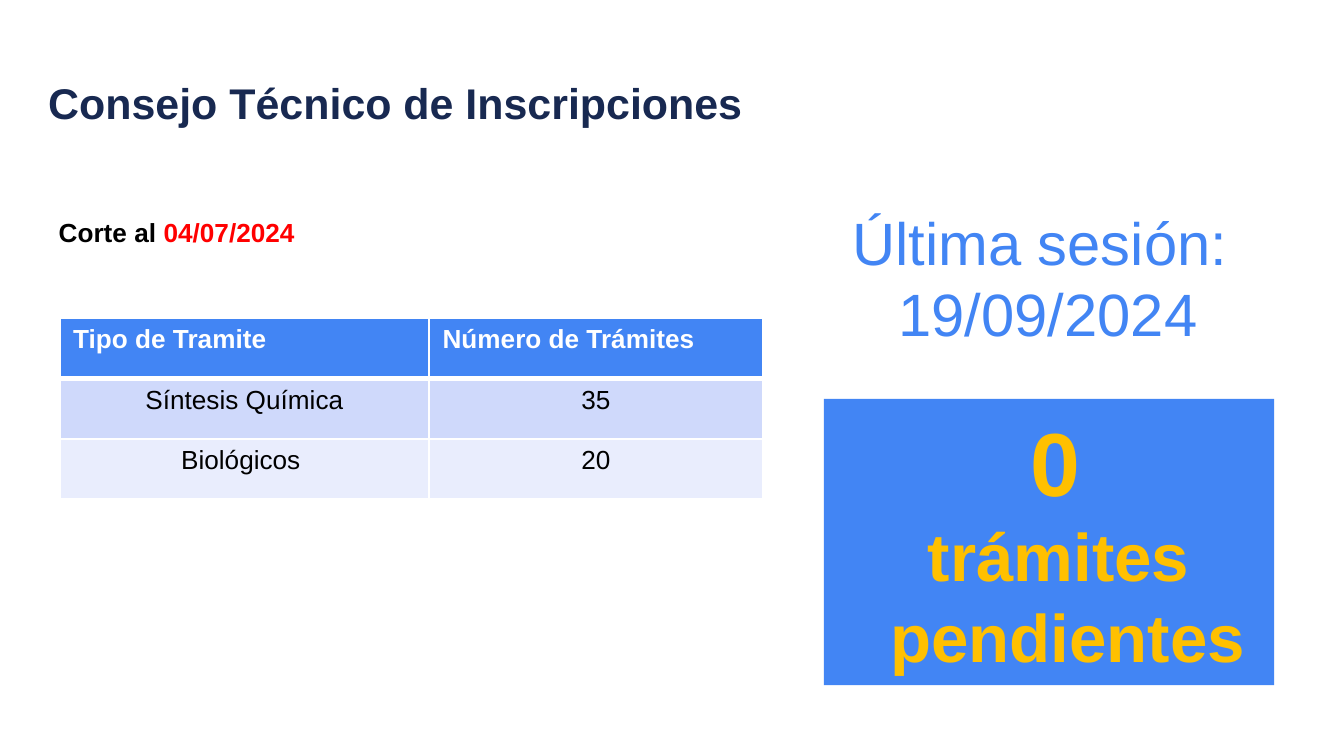
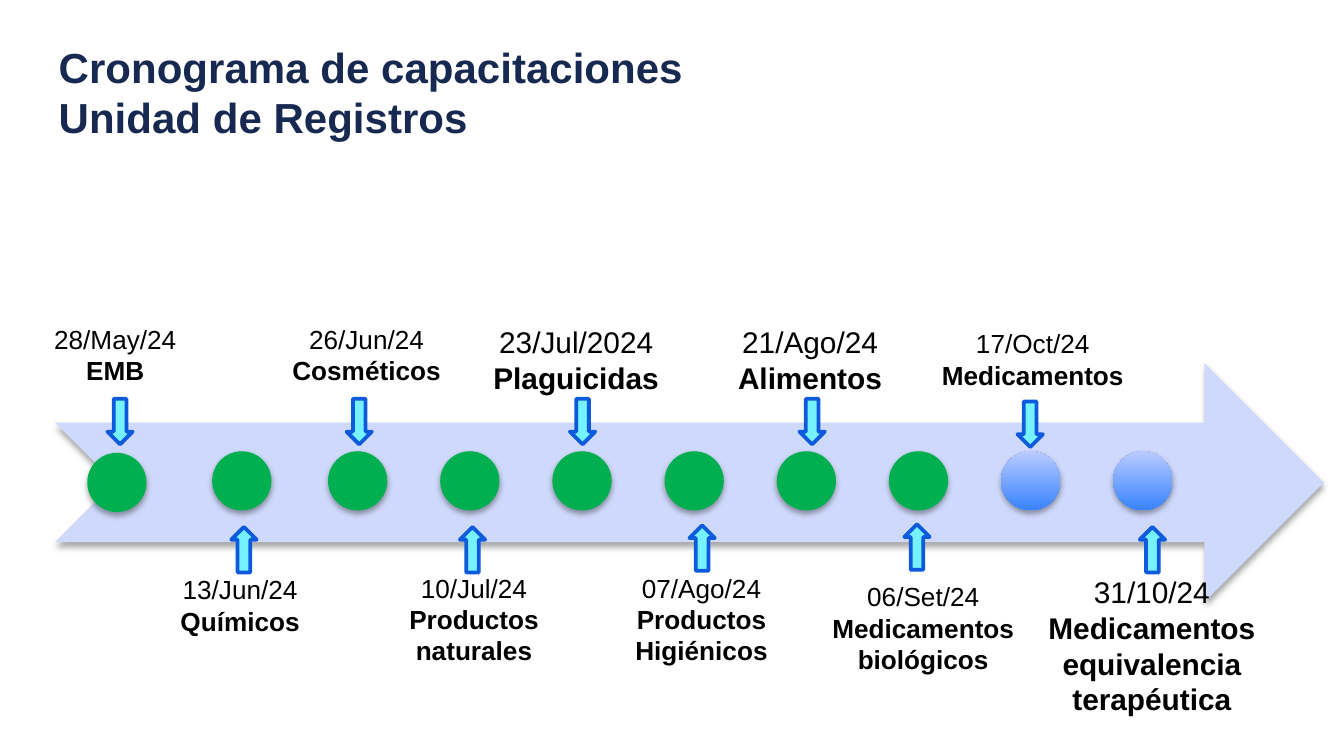
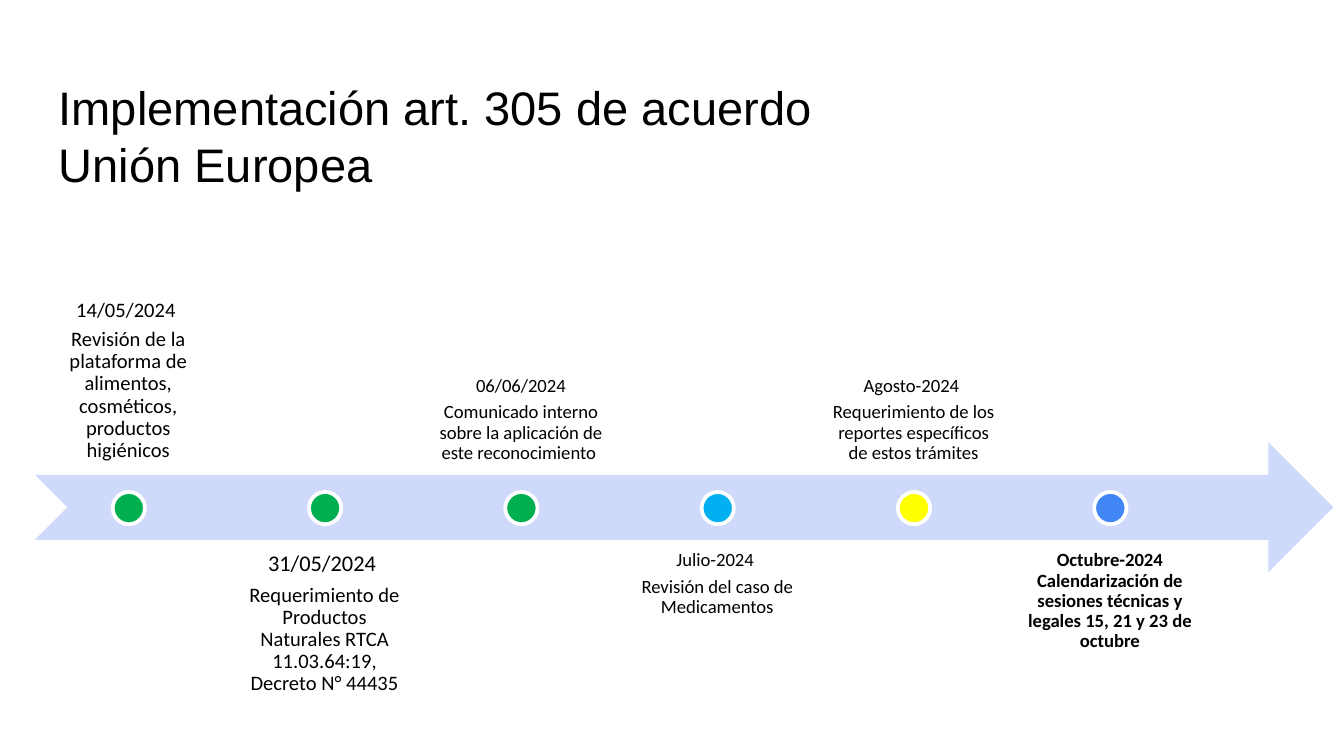
from copy import deepcopy
from dataclasses import dataclass

from lxml.etree import SubElement as Sub
from pptx import Presentation
from pptx.dml.color import RGBColor as Rgb
from pptx.enum.shapes import MSO_SHAPE as Form
from pptx.enum.text import MSO_ANCHOR as Anchor, MSO_AUTO_SIZE as Fit, PP_ALIGN as Align
from pptx.oxml.ns import qn
from pptx.util import Cm, Pt


@dataclass(frozen=True)
class Theme:
    font: str = "Arial"
    note: str = "Calibri"
    navy: str = "182951"
    blue: str = "4285F4"
    gold: str = "FFC000"
    black: str = "000000"
    white: str = "FFFFFF"
    red: str = "FF0000"
    green: str = "00B050"
    sky: str = "00B0F0"
    yellow: str = "FFFF00"
    band: str = "CFD9FB"
    pale: str = "E9EDFD"
    aqua: str = "76F2FF"
    edge: str = "0D5BDC"
    deep: str = "3782FF"
    soft: str = "BBCBFF"
    body: float = 14
    large: float = 16
    date: float = 32
    count: float = 48
    unit: float = 36


class Deck:
    def __init__(self, theme):
        self.theme = theme
        self.show = Presentation()
        self.show.slide_width = Cm(25.4)
        self.show.slide_height = Cm(14.29)
        self.slide = None

    def ink(self, part, size, tint, bold=False, font=None):
        for run in part.runs:
            run.font.name = font or self.theme.font
            run.font.size = Pt(size)
            run.font.bold = bold
            run.font.color.rgb = Rgb.from_string(tint)

    def pad(self, frame, gap):
        frame.margin_left = frame.margin_right = Cm(gap)
        frame.margin_top = frame.margin_bottom = Cm(gap)

    def title(self, text, box, size, tint, bold=True):
        self.slide = self.show.slides.add_slide(self.show.slide_layouts[5])
        head = self.slide.shapes.title
        head.left, head.top, head.width, head.height = map(Cm, box)
        frame = head.text_frame
        frame.text = text
        frame.auto_size = Fit.NONE
        frame.vertical_anchor = Anchor.TOP
        self.pad(frame, 0.25)
        line = frame.paragraphs[0]
        line.alignment = Align.LEFT
        self.ink(line, size, tint, bold)
        for gap in line._p.findall(qn("a:br")):
            gap.append(deepcopy(line.runs[0].font._element))

    def text(self, lines, box, size, tint, bold=False, font=None,
             align=Align.CENTER, wrap=True, fit=Fit.SHAPE_TO_FIT_TEXT):
        frame = self.slide.shapes.add_textbox(*map(Cm, box)).text_frame
        frame.text = "\n".join(lines)
        frame.word_wrap = wrap
        frame.auto_size = fit
        for line in frame.paragraphs:
            line.alignment = align
            self.ink(line, size, tint, bold, font)
        return frame

    def shape(self, form, box, fill, edge=None, shade=False):
        item = self.slide.shapes.add_shape(form, *map(Cm, box))
        if isinstance(fill, tuple):
            item.fill.gradient()
            item.fill.gradient_angle = 90
            for stop, tint in zip(item.fill.gradient_stops, fill):
                stop.color.rgb = Rgb.from_string(tint)
        else:
            item.fill.solid()
            item.fill.fore_color.rgb = Rgb.from_string(fill)
        if edge:
            item.line.color.rgb = Rgb.from_string(edge)
            item.line.width = Pt(2)
        else:
            item.line.fill.background()
        item.shadow.inherit = False
        if shade:
            self.shade(item)
        return item

    def shade(self, item):
        glow = item._element.spPr.find(qn("a:effectLst"))
        cast = Sub(glow, qn("a:outerShdw"), blurRad=str(Pt(3.1)), dist=str(Pt(1.8)),
                   dir="5400000", rotWithShape="0")
        tint = Sub(cast, qn("a:srgbClr"), val=self.theme.black)
        Sub(tint, qn("a:alpha"), val="35000")

    def rule(self, cell, side, width):
        edge = Sub(cell._tc.get_or_add_tcPr(), qn("a:ln" + side), w=str(Pt(width)))
        Sub(Sub(edge, qn("a:solidFill")), qn("a:srgbClr"), val=self.theme.white)

    def table(self, rows, spot, cols, high):
        look = self.theme
        fills = (look.blue, look.band, look.pale)
        grid = self.slide.shapes.add_table(
            len(rows), len(cols), *map(Cm, (*spot, sum(cols), high * len(rows)))).table
        for col, width in zip(grid.columns, cols):
            col.width = Cm(width)
        for r, row in enumerate(rows):
            grid.rows[r].height = Cm(high)
            for c, text in enumerate(row):
                cell = grid.cell(r, c)
                cell.text = text
                for side in "LRTB":
                    thick = (r, side) in ((0, "B"), (1, "T"))
                    self.rule(cell, side, 3 if thick else 1)
                cell.fill.solid()
                cell.fill.fore_color.rgb = Rgb.from_string(fills[r])
                line = cell.text_frame.paragraphs[0]
                line.alignment = Align.CENTER if r else Align.LEFT
                self.ink(line, look.body, look.black if r else look.white, r == 0)


def council(deck):
    look = deck.theme
    deck.title("Consejo Técnico de Inscripciones", (0.66, 1.19, 23.67, 1.6), 23, look.navy)
    deck.shape(Form.RECTANGLE, (15.57, 7.54, 8.51, 5.41), look.blue)
    deck.text(("Última sesión: ", "19/09/2024"), (15.82, 3.76, 7.98, 3),
              look.date, look.blue, wrap=False)
    count = deck.text(("0 ", "trámites ", "pendientes"), (16.54, 7.57, 7.29, 5.38),
                      look.unit, look.gold, True, wrap=False)
    deck.ink(count.paragraphs[0], look.count, look.gold, True)
    rows = (("Tipo de Tramite", "Número de Trámites"),
            ("Síntesis Química", "35"),
            ("Biológicos ", "20"))
    deck.table(rows, (1.13, 6.02), (6.98, 6.3), 1.14)
    cut = deck.text(("Corte al ",), (0.86, 3.96, 6.91, 0.86),
                    look.body, look.black, True, align=Align.LEFT).paragraphs[0]
    cut.add_run().text = "04/07/2024"
    deck.ink(cut, look.body, look.black, True)
    cut.runs[1].font.color.rgb = Rgb.from_string(look.red)


def training(deck):
    look = deck.theme
    deck.title("Cronograma de capacitaciones\vUnidad de Registros",
               (0.86, 0.53, 13.92, 1.6), 22.5, look.navy)
    deck.shape(Form.NOTCHED_RIGHT_ARROW, (1.04, 6.86, 23.98, 4.52), look.band, shade=True)
    spots = [(1.65, 8.56), (4.01, 8.53)] + [(6.2 + 2.12 * i, 8.53) for i in range(8)]
    for i, spot in enumerate(spots):
        fill = look.green if i < 8 else (look.deep, look.soft)
        deck.shape(Form.OVAL, (*spot, 1.12, 1.12), fill, shade=True)
    small, large = look.body, look.large
    events = (
        ("28/May/24", "EMB", small, (-0.18, 5.99), 1.45, (2.03, 7.54)),
        ("13/Jun/24", "Químicos", small, (2.18, 10.72), 1.45, (4.37, 9.96)),
        ("26/Jun/24", "Cosméticos", small, (4.57, 5.99), 1.45, (6.55, 7.54)),
        ("10/Jul/24", "Productos naturales", small, (6.6, 10.69), 2.06, (8.69, 9.96)),
        ("23/Jul/2024", "Plaguicidas", large, (8.53, 5.99), 1.63, (10.77, 7.54)),
        ("07/Ago/24", "Productos Higiénicos", small, (10.9, 10.69), 2.06, (13.03, 9.93)),
        ("21/Ago/24", "Alimentos", large, (12.95, 5.99), 1.63, (15.11, 7.54)),
        ("06/Set/24", "Medicamentos biológicos", small, (15.09, 10.85), 2.06, (17.09, 9.91)),
        ("17/Oct/24", "Medicamentos", small, (17.16, 6.07), 1.45, (19.23, 7.59)),
        ("31/10/24", "Medicamentos equivalencia terapéutica", large,
         (19.41, 10.72), 3.5, (21.54, 9.96)),
    )
    for i, (date, name, size, spot, high, tip) in enumerate(events):
        label = deck.text((date, name), (*spot, 4.72, high), size, look.black)
        deck.ink(label.paragraphs[1], size, look.black, True)
        arrow = deck.shape(Form.DOWN_ARROW, (*tip, 0.48, 0.86), look.aqua, look.edge)
        arrow.rotation = 180 if i in (1, 3, 5, 7, 9) else 0


def accord(deck):
    look = deck.theme
    deck.title("Implementación art. 305 de acuerdo \vUnión Europea",
               (0.86, 1.24, 23.67, 1.6), 25.2, look.black, False)
    deck.shape(Form.NOTCHED_RIGHT_ARROW, (0.66, 8.36, 24.54, 2.46), look.band)
    steps = (
        (("14/05/2024 ", "Revisión de la plataforma de alimentos, cosméticos, "
          "productos higiénicos"), (11, 11), look.green),
        (("31/05/2024 ", "Requerimiento de Productos Naturales RTCA 11.03.64:19, "
          "Decreto N° 44435"), (12, 11), look.green),
        (("06/06/2024", "Comunicado interno sobre la aplicación de este "
          "reconocimiento "), (10, 10), look.green),
        (("Julio-2024 ", "Revisión del caso de Medicamentos"), (10, 10), look.sky),
        (("Agosto-2024 ", "Requerimiento de los reportes específicos de estos "
          "trámites"), (10, 10), look.yellow),
        (("Octubre-2024 Calendarización de sesiones técnicas y legales 15, 21 y 23 "
          "de octubre",), (10,), look.blue),
    )
    for i, (lines, sizes, fill) in enumerate(steps):
        shift = 3.71 * i
        above = i % 2 == 0
        bold = len(lines) == 1
        frame = deck.text(lines, (0.66 + shift, 6.5 if above else 10.21, 3.53, 2.46),
                          sizes[0], look.black, bold, look.note, fit=Fit.NONE)
        frame.vertical_anchor = Anchor.BOTTOM if above else Anchor.TOP
        deck.pad(frame, 0.23 if i < 2 else 0.2)
        for line, size in zip(frame.paragraphs, sizes):
            line.line_spacing = 0.9
            line.space_after = Pt(0.35 * size)
            deck.ink(line, size, look.black, bold, look.note)
        deck.shape(Form.OVAL, (2.13 + shift, 9.3, 0.61, 0.61), fill, look.white)


def main():
    deck = Deck(Theme())
    council(deck)
    training(deck)
    accord(deck)
    deck.show.save("out.pptx")


if __name__ == "__main__":
    main()
